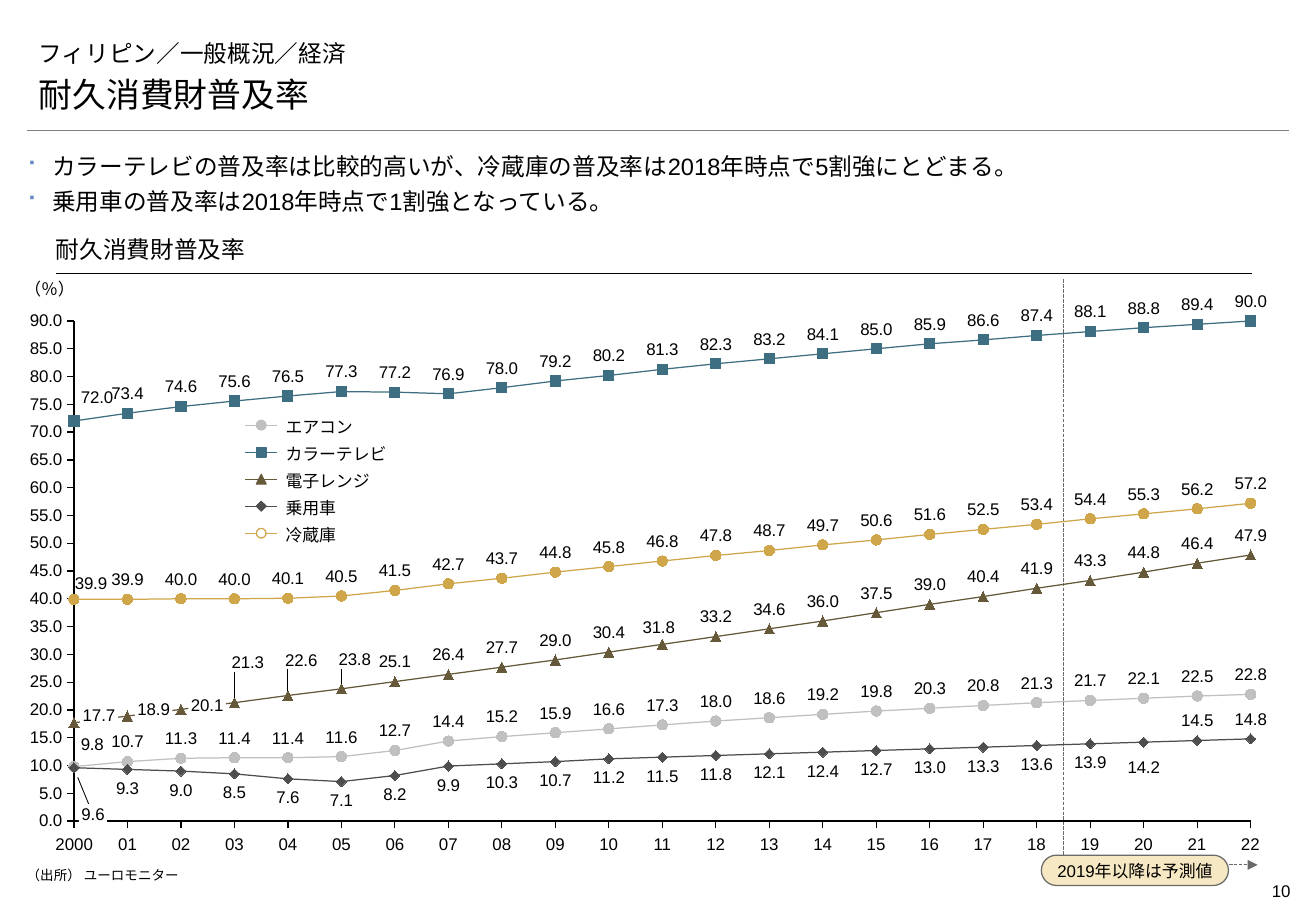
"""Build the slide on durable goods ownership rates in the Philippines."""
import lxml.etree
import pptx
import pptx.chart.data
import pptx.dml.color
import pptx.enum.chart
import pptx.enum.dml
import pptx.enum.shapes
import pptx.enum.text
import pptx.oxml
import pptx.oxml.ns
import pptx.util

Inches, Pt, qn = pptx.util.Inches, pptx.util.Pt, pptx.oxml.ns.qn
ALIGN, ANCHOR = pptx.enum.text.PP_ALIGN, pptx.enum.text.MSO_ANCHOR
SHAPE, MARKER = pptx.enum.shapes.MSO_SHAPE, pptx.enum.chart.XL_MARKER_STYLE
LABEL = pptx.enum.chart.XL_LABEL_POSITION
BLACK, WHITE, GREY = "000000", "FFFFFF", "6A6A6A"
NO_INSET, THIN_INSET, DEFAULT_INSET = (0, 0, 0, 0), (0.02, 0, 0.02, 0), (0.1, 0.05, 0.1, 0.05)
CHART_WIDTH, CHART_HEIGHT = 10.38, 4.52
FIRST_YEAR_X, YEAR_STEP = 0.61, 0.44
FORMAT = '#,##0.0;"-"#,##0.0'

AIRCON = [9.8, 10.7, 11.3, 11.4, 11.4, 11.6, 12.7, 14.4, 15.2, 15.9, 16.6, 17.3,
          18, 18.6, 19.2, 19.8, 20.3, 20.8, 21.3, 21.7, 22.1, 22.5, 22.8]
TELEVISION = [72, 73.4, 74.6, 75.6, 76.5, 77.3, 77.2, 76.9, 78, 79.2, 80.2, 81.3,
              82.3, 83.2, 84.1, 85, 85.9, 86.6, 87.4, 88.1, 88.8, 89.4, 90]
MICROWAVE = [17.7, 18.9, 20.1, 21.3, 22.6, 23.8, 25.1, 26.4, 27.7, 29, 30.4, 31.8,
             33.2, 34.6, 36, 37.5, 39, 40.4, 41.9, 43.3, 44.8, 46.4, 47.9]
CAR = [9.6, 9.3, 9, 8.5, 7.6, 7.1, 8.2, 9.9, 10.3, 10.7, 11.2, 11.5,
       11.8, 12.1, 12.4, 12.7, 13, 13.3, 13.6, 13.9, 14.2, 14.5, 14.8]
FRIDGE = [39.9, 39.9, 40, 40, 40.1, 40.5, 41.5, 42.7, 43.7, 44.8, 45.8, 46.8,
          47.8, 48.7, 49.7, 50.6, 51.6, 52.5, 53.4, 54.4, 55.3, 56.2, 57.2]
GOODS = [
    ("エアコン", AIRCON, "C0C0C0", "C0C0C0", MARKER.CIRCLE, SHAPE.OVAL),
    ("カラーテレビ", TELEVISION, "3D6E81", "3D6E81", MARKER.SQUARE, SHAPE.RECTANGLE),
    ("電子レンジ", MICROWAVE, "655939", "655939", MARKER.TRIANGLE, SHAPE.ISOSCELES_TRIANGLE),
    ("乗用車", CAR, "4D4D4D", "4D4D4D", MARKER.DIAMOND, SHAPE.DIAMOND),
    ("冷蔵庫", FRIDGE, "CFA649", WHITE, MARKER.CIRCLE, SHAPE.OVAL),
]
MOVED_LABELS = {
    "エアコン": {0: (0.15, -0.02)},
    "カラーテレビ": {0: (0.19, -0.03)},
    "電子レンジ": {3: (0.11, -0.17), 4: (0.11, -0.13), 5: (0.11, -0.08), 11: (-0.03, 0.02)},
    "乗用車": {20: (0, 0.05)},
    "冷蔵庫": {0: (0.14, 0.03)},
}
HIDDEN_LABELS = {"電子レンジ": [0, 1, 2], "乗用車": [0]}
RAISED_LABELS = {"乗用車": [21, 22]}


def rgb(value):
    """Turn a hex string into a colour."""
    return pptx.dml.color.RGBColor.from_string(value)


def paint(target, fill, line=None):
    """Set the fill and outline of a shape or marker."""
    target.fill.solid()
    target.fill.fore_color.rgb = rgb(fill)
    if line:
        stroke(target.line, line)
    else:
        target.line.fill.background()


def stroke(line, color, width=0.75):
    """Set the colour and width of a line."""
    line.color.rgb = rgb(color)
    line.width = Pt(width)


def write(box, lines, size=10, font="Arial", align=ALIGN.LEFT, anchor=ANCHOR.TOP,
          inset=NO_INSET, wrap=False):
    """Fill a shape with paragraphs in one style."""
    frame = box.text_frame
    frame.word_wrap, frame.vertical_anchor = wrap, anchor
    frame.margin_left, frame.margin_top, frame.margin_right, frame.margin_bottom = map(Inches, inset)
    frame.text = "\n".join(lines)
    for para in frame.paragraphs:
        para.alignment = align
        para.font.size, para.font.name = Pt(size), font
        para.font.color.rgb = rgb(BLACK)


def add_text(page, place, text, **style):
    """Add a text box with one paragraph."""
    box = page.shapes.add_textbox(*map(Inches, place))
    write(box, [text], **style)


def add_shape(page, kind, place, fill, line=None):
    """Add a flat preset shape."""
    box = page.shapes.add_shape(kind, *map(Inches, place))
    box.shadow.inherit = False
    paint(box, fill, line)
    return box


def add_line(page, start, end, color, width=0.75):
    """Add a straight line without shadow."""
    line = page.shapes.add_connector(pptx.enum.shapes.MSO_CONNECTOR.STRAIGHT,
                                     *map(Inches, start + end))
    stroke(line.line, color, width)
    lxml.etree.SubElement(line._element.spPr, qn("a:effectLst"))


def add_findings(page, lines):
    """Add the bulleted findings."""
    box = page.shapes.add_textbox(*map(Inches, (0.22, 1.23, 10.39, 0.55)))
    write(box, lines, size=14, align=ALIGN.JUSTIFY, wrap=True)
    for para in box.text_frame.paragraphs:
        props = para._p.get_or_add_pPr()
        props.set("marL", str(Inches(0.21)))
        props.set("indent", str(Inches(-0.21)))
        color = lxml.etree.Element(qn("a:buClr"))
        lxml.etree.SubElement(color, qn("a:srgbClr"), val="5F8AC3")
        face = lxml.etree.Element(qn("a:buFont"), typeface="Wingdings")
        bullet = lxml.etree.Element(qn("a:buChar"), char="■")
        for place, element in enumerate((color, face, bullet)):
            props.insert(place, element)
        para.line_spacing, para.space_after = 1.1, Pt(2)


def make_layout(**settings):
    """Make a manual chart layout element."""
    layout = lxml.etree.Element(qn("c:layout"))
    manual = lxml.etree.SubElement(layout, qn("c:manualLayout"))
    for name, value in settings.items():
        lxml.etree.SubElement(manual, qn("c:" + name), val=str(value))
    return layout


def label_series(series):
    """Place, move and hide the value labels of a series."""
    normal = LABEL.BELOW if series.name == "乗用車" else LABEL.ABOVE
    labels = series.data_labels
    labels.show_value, labels.position = True, normal
    labels.number_format, labels.number_format_is_linked = FORMAT, False

    def own_label(index, position):
        series.points[index].data_label.position = position
        return series._element.xpath(f'c:dLbls/c:dLbl[c:idx/@val="{index}"]')[0]

    for index, (right, down) in MOVED_LABELS[series.name].items():
        own_label(index, normal).insert(1, make_layout(x=round(right / CHART_WIDTH, 4),
                                                       y=round(down / CHART_HEIGHT, 4)))
    for index in RAISED_LABELS.get(series.name, []):
        own_label(index, LABEL.ABOVE)
    for index in HIDDEN_LABELS.get(series.name, []):
        label = own_label(index, normal)
        for child in list(label)[1:]:
            label.remove(child)
        lxml.etree.SubElement(label, qn("c:delete"), val="1")
    series._element.find(qn("c:dLbls")).append(pptx.oxml.parse_xml(
        '<c:extLst xmlns:c="http://schemas.openxmlformats.org/drawingml/2006/chart">'
        '<c:ext uri="{CE6537A1-D6FC-4f65-9D91-7224C49458BB}" '
        'xmlns:c15="http://schemas.microsoft.com/office/drawing/2012/chart">'
        '<c15:showLeaderLines val="1"/></c:ext></c:extLst>'))


def style_axes(chart):
    """Style both axes and start the lines on the value axis."""
    years, rates = chart.category_axis, chart.value_axis
    for axis in (years, rates):
        axis.has_major_gridlines = False
        axis.major_tick_mark = pptx.enum.chart.XL_TICK_MARK.OUTSIDE
        axis.minor_tick_mark = pptx.enum.chart.XL_TICK_MARK.NONE
        stroke(axis.format.line, BLACK)
    years.tick_label_position = pptx.enum.chart.XL_TICK_LABEL_POSITION.NONE
    rates.minimum_scale, rates.maximum_scale, rates.major_unit = 0, 90, 5
    rates.tick_labels.number_format = FORMAT
    rates.tick_labels.number_format_is_linked = False
    for old in rates._element.findall(qn("c:crossBetween")):
        rates._element.remove(old)
    rates._element.find(qn("c:crosses")).addnext(
        lxml.etree.Element(qn("c:crossBetween"), val="midCat"))


def add_rate_chart(page):
    """Add the line chart of ownership rates."""
    data = pptx.chart.data.CategoryChartData(number_format="0.0")
    data.categories = [str(number) for number in range(1, 24)]
    for name, values, *_ in GOODS:
        data.add_series(name, values)
    chart = page.shapes.add_chart(pptx.enum.chart.XL_CHART_TYPE.LINE_MARKERS,
                                  *map(Inches, (0.1, 2.35, CHART_WIDTH, CHART_HEIGHT)), data).chart
    chart.has_legend = chart.has_title = False
    chart.font.size, chart.font.name = Pt(10), "Arial"
    chart.font.color.rgb = rgb(BLACK)
    chart.plots[0].vary_by_categories = False
    style_axes(chart)
    for series, (_, _, color, fill, marker, _) in zip(chart.plots[0].series, GOODS):
        series.smooth = False
        stroke(series.format.line, color)
        series.marker.style, series.marker.size = marker, 6
        paint(series.marker.format, fill, color)
        label_series(series)
    area = chart._chartSpace.chart.plotArea
    for old in area.findall(qn("c:layout")):
        area.remove(old)
    area.insert(0, make_layout(layoutTarget="inner", xMode="edge", yMode="edge",
                               x=0.049, y=0.065, w=0.933, h=0.911))


def add_legend(page):
    """Add the legend rows."""
    for row, (name, _, color, fill, _, kind) in enumerate(GOODS):
        middle = 3.5 + 0.89 * row / 4
        add_line(page, (2.02, middle), (2.28, middle), color)
        add_shape(page, kind, (2.11, middle - 0.04, 0.08, 0.08), fill, color)
        add_text(page, (2.35, middle - 0.07, 1.2, 0.17), name, anchor=ANCHOR.MIDDLE, wrap=True)


def add_forecast_mark(page):
    """Add the dashed forecast boundary and its label."""
    builder = page.shapes.build_freeform(Inches(8.75), Inches(2.3))
    builder.add_line_segments([(Inches(8.75), Inches(7.12)), (Inches(10.35), Inches(7.12))], close=False)
    border = builder.convert_to_shape()
    border.shadow.inherit = False
    border.fill.background()
    stroke(border.line, GREY)
    border.line.dash_style = pptx.enum.dml.MSO_LINE.SQUARE_DOT
    lxml.etree.SubElement(border.line._get_or_add_ln(), qn("a:tailEnd"), type="triangle")
    label = add_shape(page, SHAPE.ROUNDED_RECTANGLE, (8.57, 7.04, 1.54, 0.25), "F6E8C2", GREY)
    label.adjustments[0] = 0.5
    write(label, ["2019年以降は予測値"], align=ALIGN.CENTER, anchor=ANCHOR.MIDDLE, inset=DEFAULT_INSET)


def main():
    """Build and save the slide."""
    deck = pptx.Presentation()
    deck.slide_width, deck.slide_height = Inches(10.83), Inches(7.5)
    page = deck.slides.add_slide(deck.slide_layouts[6])
    heading = {"font": "Montserrat", "anchor": ANCHOR.BOTTOM, "wrap": True}
    add_line(page, (0.22, 1.07), (10.61, 1.07), "7F7F7F", 0.25)
    add_text(page, (9.83, 7.2, 0.79, 0.27), "10", align=ALIGN.RIGHT, inset=(0, 0.05, 0, 0.05), wrap=True)
    add_text(page, (0.22, 0.21, 10.39, 0.39), "フィリピン／一般概況／経済", size=14, inset=DEFAULT_INSET, **heading)
    add_text(page, (0.22, 0.6, 10.4, 0.39), "耐久消費財普及率", size=20, inset=DEFAULT_INSET, **heading)
    add_line(page, (0.46, 2.25), (10.3, 2.25), BLACK)
    add_text(page, (0.46, 1.94, 9.84, 0.31), "耐久消費財普及率", size=14, inset=(0, 0.05, 0, 0.08), **heading)
    add_text(page, (0.22, 7.14, 6.14, 0.16), "（出所） ユーロモニター", size=8, wrap=True)
    add_findings(page, ["カラーテレビの普及率は比較的高いが、冷蔵庫の普及率は2018年時点で5割強にとどまる。",
                        "乗用車の普及率は2018年時点で1割強となっている。"])
    add_forecast_mark(page)
    add_rate_chart(page)
    add_line(page, (0.73, 6.62), (0.64, 6.4), BLACK, 0.5)
    for text, left, top, width in [("18.9", 1.11, 5.75, 0.31), ("9.6", 0.65, 6.62, 0.23),
                                   ("17.7", 0.66, 5.8, 0.31), ("20.1", 1.55, 5.72, 0.31)]:
        box = add_shape(page, SHAPE.RECTANGLE, (left, top, width, 0.17), WHITE)
        write(box, [text], inset=THIN_INSET)
    add_text(page, (0.2, 2.29, 0.6, 0.17), "（％）", anchor=ANCHOR.BOTTOM, wrap=True)
    for year in range(23):
        text = f"{year:02}" if year else "2000"
        width = 0.08 * len(text)
        left = FIRST_YEAR_X + YEAR_STEP * year - width / 2
        add_text(page, (left, 6.86, width, 0.17), text, align=ALIGN.CENTER)
    add_legend(page)
    deck.save("out.pptx")


if __name__ == "__main__":
    main()
